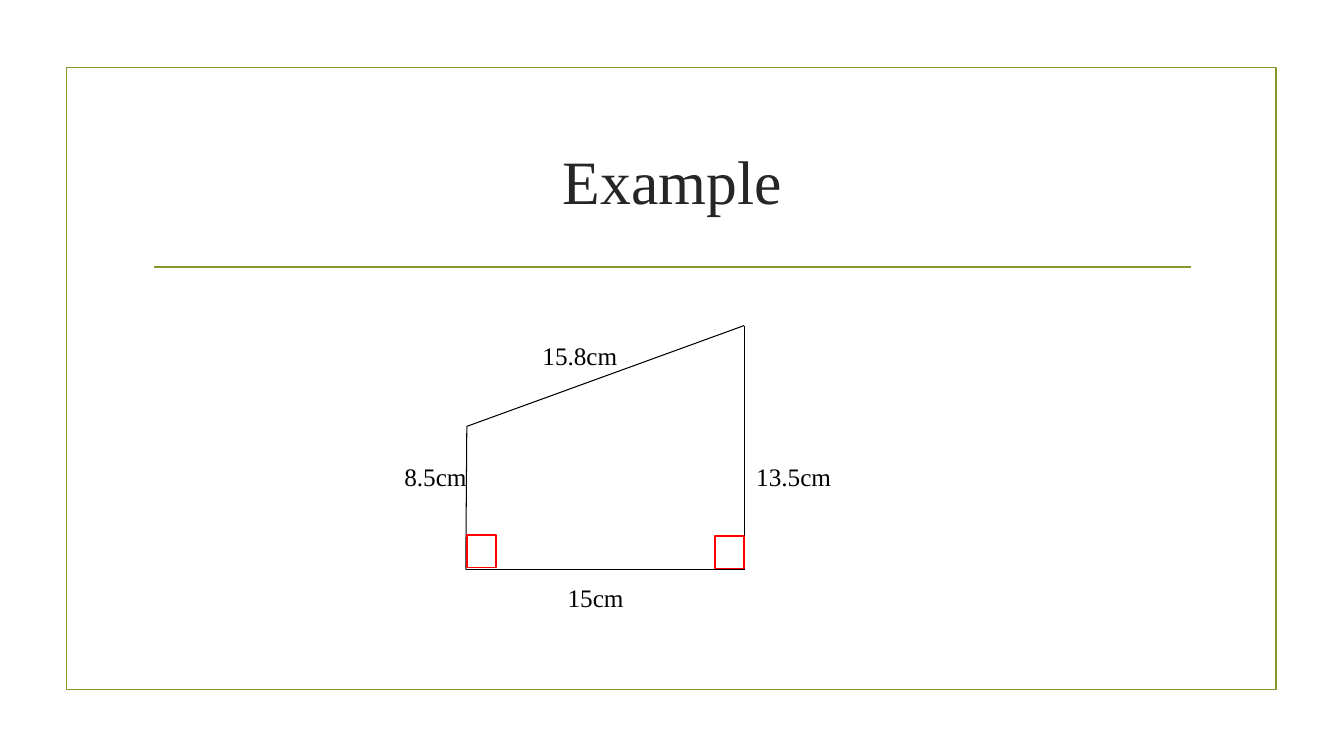
from pptx import Presentation
from pptx.dml.color import RGBColor
from pptx.enum.shapes import MSO_CONNECTOR as Conn, MSO_SHAPE as Shape
from pptx.enum.text import MSO_ANCHOR as Anchor, PP_ALIGN as Align
from pptx.util import Inches, Pt
from lxml import etree

GREEN = RGBColor(0x83, 0x99, 0x2A)
RED = RGBColor(0xFF, 0x00, 0x00)
BLACK = RGBColor(0x00, 0x00, 0x00)
DARK = RGBColor(0x26, 0x26, 0x26)
FONT = "Times New Roman"
EFFECTS = "{http://schemas.openxmlformats.org/drawingml/2006/main}effectLst"

# Corners of the trapezium, in order around it
CORNERS = [(4.62, 5.65), (7.38, 5.65), (7.38, 3.23), (4.63, 4.23)]
# Side lengths: text, left, top
LABELS = [
    ("15.8cm", 5.38, 3.38),
    ("8.5cm", 4.01, 4.58),
    ("13.5cm", 7.5, 4.58),
    ("15cm", 5.63, 5.78),
]


def add_rect(slide, left, top, width, height, color):
    rect = slide.shapes.add_shape(
        Shape.RECTANGLE, Inches(left), Inches(top), Inches(width), Inches(height))
    rect.shadow.inherit = False
    rect.fill.background()
    rect.line.color.rgb = color
    rect.line.width = Pt(1.25)


def add_line(slide, start, end, color, width):
    line = slide.shapes.add_connector(
        Conn.STRAIGHT, *(Inches(n) for n in (*start, *end)))
    line.line.color.rgb = color
    line.line.width = Pt(width)
    etree.SubElement(line._element.spPr, EFFECTS)


def add_run(para, text, size, color):
    run = para.add_run()
    run.text = text
    run.font.name = FONT
    run.font.size = Pt(size)
    run.font.color.rgb = color


def set_title(slide, text):
    title = slide.shapes.title
    title.left, title.top = Inches(1.42), Inches(1.07)
    title.width, title.height = Inches(10.5), Inches(1.43)
    title.text_frame.vertical_anchor = Anchor.MIDDLE
    para = title.text_frame.paragraphs[0]
    para.alignment = Align.CENTER
    add_run(para, text, 44, DARK)


def add_label(slide, text, left, top):
    box = slide.shapes.add_textbox(
        Inches(left), Inches(top), Inches(0.85), Inches(0.3))
    frame = box.text_frame
    frame.word_wrap = True
    frame.margin_left = frame.margin_right = 0
    frame.margin_top = frame.margin_bottom = 0
    add_run(frame.paragraphs[0], text, 18, BLACK)


def main():
    prs = Presentation()
    prs.slide_width, prs.slide_height = Inches(13.33), Inches(7.5)
    slide = prs.slides.add_slide(prs.slide_layouts[5])

    # Frame, title and rule
    add_rect(slide, 0.66, 0.67, 12, 6.17, GREEN)
    add_line(slide, (1.53, 2.65), (11.81, 2.65), GREEN, 1.25)
    set_title(slide, "Example")

    # Trapezium
    for start, end in zip(CORNERS, CORNERS[1:] + CORNERS[:1]):
        add_line(slide, start, end, BLACK, 0.75)

    # Right-angle marks
    for left, top in [(4.63, 5.31), (7.09, 5.32)]:
        add_rect(slide, left, top, 0.29, 0.32, RED)

    # Side lengths
    for text, left, top in LABELS:
        add_label(slide, text, left, top)

    prs.save("out.pptx")


if __name__ == "__main__":
    main()
